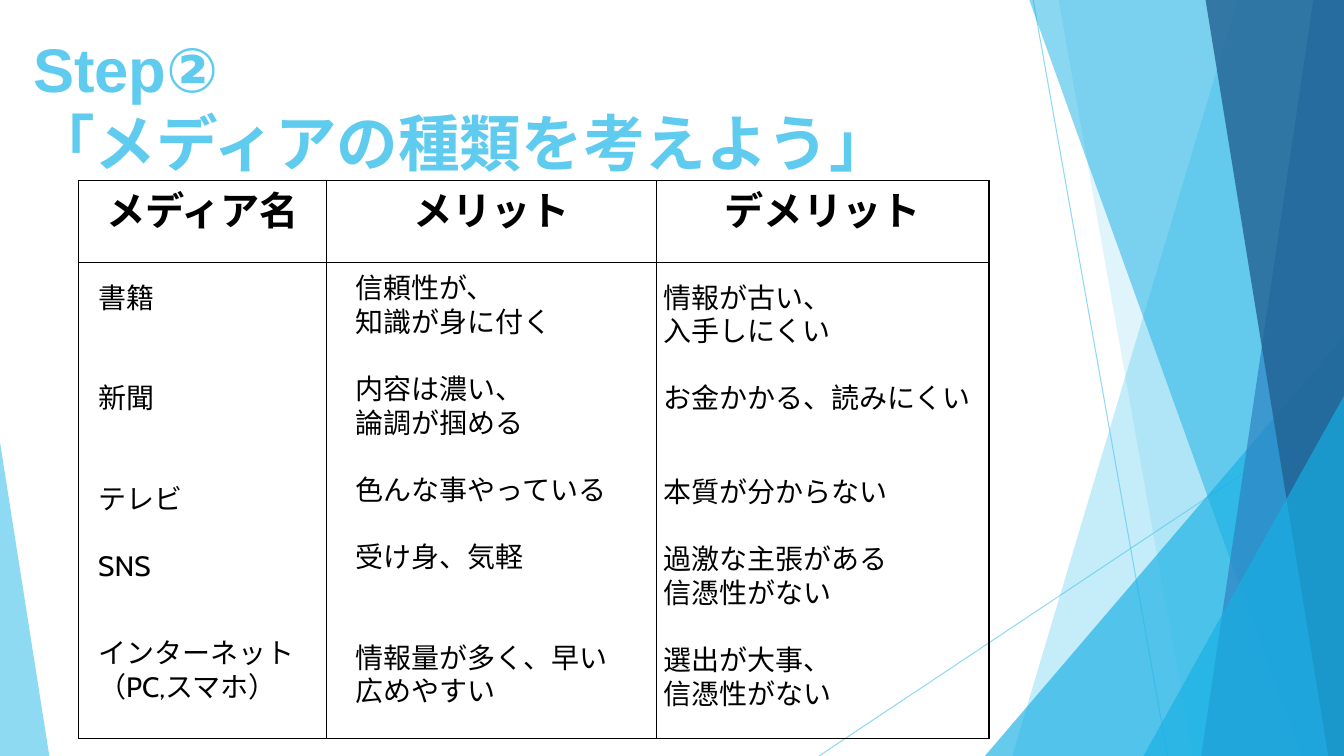
from pptx import Presentation, util as u
from pptx.dml.color import RGBColor
from pptx.enum import shapes, text
from pptx.oxml import parse_xml
from pptx.oxml.ns import nsdecls, qn
from lxml import etree

PX = 9525
W, H = 1280, 720
C = {"sky": "5FCBEF", "cyan": "17B0E4", "blue": "2E83C3", "navy": "226292", "black": "000000"}
HEADERS = ["メディア名", "メリット", "デメリット"]
MEDIA = [("書籍", 0), ("新聞", 48), ("テレビ", 48), ("SNS", 24),
         ("インターネット", 38), ("（PC,スマホ）", 0)]
MERITS = [("信頼性が、", 0), ("知識が身に付く", 0), ("内容は濃い、", 24), ("論調が掴める", 0),
          ("色んな事やっている", 24), ("受け身、気軽", 24), ("情報量が多く、早い", 48), ("広めやすい", 0)]
DEMERITS = [("情報が古い、", 0), ("入手しにくい", 0), ("お金かかる、読みにくい", 24),
            ("本質が分からない", 43), ("過激な主張がある", 24), ("信憑性がない", 0),
            ("選出が大事、", 24), ("信憑性がない", 0)]


def box_emu(box):
    """Turn a px box into EMU lengths."""
    return [v * PX for v in box]


def set_alpha(color_format_parent, alpha):
    """Set the opacity in percent of the solid fill found in an element."""
    clr = next(color_format_parent.iter(qn("a:srgbClr")))
    etree.SubElement(clr, qn("a:alpha")).set("val", str(alpha * 1000))


def paint(sp, color, alpha):
    """Give a shape a translucent fill with no line or shadow."""
    sp.shadow.inherit = False
    sp.fill.solid()
    sp.fill.fore_color.rgb = RGBColor.from_string(C[color])
    sp.line.fill.background()
    set_alpha(sp._element.spPr, alpha)


def style(p, size, font, color, bold=False):
    """Format every run of a paragraph."""
    for r in p.runs:
        r.font.size = u.Pt(size)
        r.font.name = font
        r.font.bold = bold
        r.font.color.rgb = RGBColor.from_string(C[color])


def add_line(s, ends):
    """Draw one thin translucent line."""
    cn = s.shapes.add_connector(shapes.MSO_CONNECTOR.STRAIGHT, *box_emu(ends))
    cn.line.width = u.Pt(0.75)
    cn.line.color.rgb = RGBColor.from_string(C["sky"])
    set_alpha(cn._element.spPr, 70)
    etree.SubElement(cn._element.spPr, qn("a:effectLst"))


def add_band(s, top_x, bottom_x, color, alpha):
    """Draw a slanted band reaching the right edge of the slide."""
    fb = s.shapes.build_freeform(top_x, -1, scale=PX)
    fb.add_line_segments([(W, -1), (W, H), (bottom_x, H)], close=True)
    paint(fb.convert_to_shape(), color, alpha)


def add_triangle(s, box, apex, color, alpha):
    """Draw a triangle with its apex at a fraction of its width."""
    sp = s.shapes.add_shape(shapes.MSO_SHAPE.ISOSCELES_TRIANGLE, *box_emu(box))
    sp.adjustments[0] = apex
    paint(sp, color, alpha)


def add_backdrop(s):
    """Draw the overlapping facets at the slide edges."""
    add_line(s, (984, 0, 1112, H))
    add_line(s, (W, 387, 780, H))
    add_band(s, 1179, 964, "sky", 36)
    add_band(s, 1008, 1136, "sky", 20)
    add_triangle(s, (938, 320, 342, 400), 1, "cyan", 66)
    add_band(s, 980, 1239, "cyan", 50)
    add_band(s, 1251, 1144, "blue", 70)
    add_band(s, 1148, 1265, "navy", 80)
    add_triangle(s, (1089, 377, 191, 343), 1, "cyan", 66)
    add_triangle(s, (0, 421, 47, 299), 0, "sky", 70)


def add_text(s, box):
    """Add a wrapping text box and return its text frame."""
    tf = s.shapes.add_textbox(*box_emu(box)).text_frame
    tf.word_wrap = True
    return tf


def add_title(s, box):
    """Write the two-line slide title."""
    tf = add_text(s, box)
    tf.vertical_anchor = text.MSO_ANCHOR.MIDDLE
    p = tf.paragraphs[0]
    p.text = "Step②\v「メディアの種類を考えよう」"
    style(p, 44, "Arial", "sky", True)


def add_column(s, box, lines):
    """Write one column of entries, each with its gap above in points."""
    tf = add_text(s, box)
    for i, (line, gap) in enumerate(lines):
        p = tf.add_paragraph() if i else tf.paragraphs[0]
        p.text = line
        p.space_before = u.Pt(gap)
        style(p, 20, "Cabin", "black")


def add_borders(cell):
    """Put a thin black border on all sides of a table cell."""
    tcPr = cell._tc.get_or_add_tcPr()
    for i, side in enumerate(("lnL", "lnR", "lnT", "lnB")):
        tcPr.insert(i, parse_xml(
            f'<a:{side} {nsdecls("a")} w="12700"><a:solidFill>'
            f'<a:srgbClr val="{C["black"]}"/></a:solidFill></a:{side}>'))


def add_grid(s, box, widths, heights):
    """Draw the table with its header row and one tall empty row."""
    tbl = s.shapes.add_table(len(heights), len(widths), *box_emu(box)).table
    for col, width in zip(tbl.columns, widths):
        col.width = width * PX
    for row, height in zip(tbl.rows, heights):
        row.height = height * PX
    for cell in tbl.iter_cells():
        cell.fill.background()
        cell.margin_left = cell.margin_right = 7 * PX
        cell.margin_top = cell.margin_bottom = 0
        add_borders(cell)
    for i, header in enumerate(HEADERS):
        p = tbl.cell(0, i).text_frame.paragraphs[0]
        p.text = header
        p.alignment = text.PP_ALIGN.CENTER
        style(p, 28, "Cambria", "black", True)


def main():
    """Build the slide and save it."""
    prs = Presentation()
    prs.slide_width, prs.slide_height = W * PX, H * PX
    s = prs.slides.add_slide(prs.slide_layouts[6])
    add_backdrop(s)
    add_title(s, (22, 18, 931, 163))
    add_grid(s, (75, 172, 867, 531), (236, 314, 317), (78, 453))
    add_column(s, (84, 262, 224, 416), MEDIA)
    add_column(s, (622, 262, 316, 469), DEMERITS)
    add_column(s, (329, 253, 266, 429), MERITS)
    prs.save("out.pptx")


if __name__ == "__main__":
    main()
